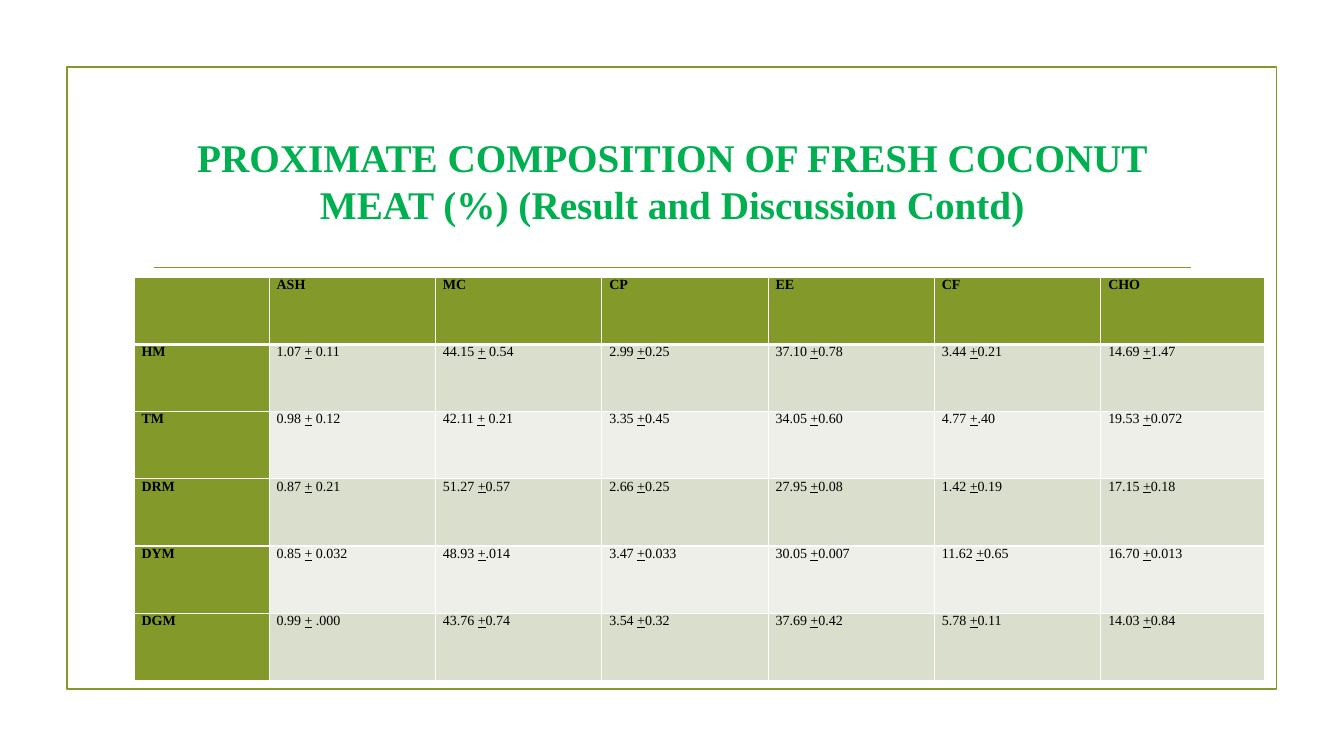
from lxml.etree import SubElement
from pptx import Presentation
from pptx.dml.color import RGBColor
from pptx.enum.shapes import MSO_CONNECTOR, MSO_SHAPE
from pptx.enum.text import MSO_ANCHOR, PP_ALIGN
from pptx.oxml.ns import qn
from pptx.util import Pt

OLIVE = RGBColor(0x83, 0x99, 0x2A)
GREEN = RGBColor(0x00, 0xB0, 0x50)
BAND_DARK = RGBColor(0xD9, 0xDE, 0xCD)
BAND_LIGHT = RGBColor(0xED, 0xEF, 0xE8)
BLACK = RGBColor(0, 0, 0)
WHITE = RGBColor(255, 255, 255)

COMPOSITION = [
    ["", "ASH", "MC", "CP", "EE", "CF", "CHO"],
    ["HM", "1.07 + 0.11", "44.15 + 0.54", "2.99 +0.25", "37.10 +0.78", "3.44 +0.21", "14.69 +1.47"],
    ["TM", "0.98 + 0.12", "42.11 + 0.21", "3.35 +0.45", "34.05 +0.60", "4.77 +.40", "19.53 +0.072"],
    ["DRM", "0.87 + 0.21", "51.27 +0.57", "2.66 +0.25", "27.95 +0.08", "1.42 +0.19", "17.15 +0.18"],
    ["DYM", "0.85 + 0.032", "48.93 +.014", "3.47 +0.033", "30.05 +0.007", "11.62 +0.65", "16.70 +0.013"],
    ["DGM", "0.99 + .000", "43.76 +0.74", "3.54 +0.32", "37.69 +0.42", "5.78 +0.11", "14.03 +0.84"],
]
COLUMN_WIDTHS = [96.5] + [118.8] * 5 + [117.4]
ROW_HEIGHT = 48
CELL_FORMAT = {"margin_left": Pt(5.4), "margin_right": Pt(5.4), "margin_top": 0,
               "margin_bottom": 0, "vertical_anchor": MSO_ANCHOR.TOP}


def add_run(paragraph, text, size, color, bold, underline=False):
    run = paragraph.add_run()
    run.text = text
    font_format = {"name": "Times New Roman", "size": Pt(size), "bold": bold, "underline": underline}
    for attribute, value in font_format.items():
        setattr(run.font, attribute, value)
    run.font.color.rgb = color


def add_border(cell, side, width):
    line = SubElement(cell._tc.get_or_add_tcPr(), qn(f"a:ln{side}"), w=str(Pt(width)))
    SubElement(SubElement(line, qn("a:solidFill")), qn("a:srgbClr"), val=str(WHITE))


presentation = Presentation()
presentation.slide_width, presentation.slide_height = Pt(960), Pt(540)
slide = presentation.slides.add_slide(presentation.slide_layouts[5])

frame = slide.shapes.add_shape(MSO_SHAPE.RECTANGLE, Pt(47.75), Pt(48), Pt(864), Pt(444.25))
frame.shadow.inherit = False
frame.fill.background()

divider = slide.shapes.add_connector(MSO_CONNECTOR.STRAIGHT, Pt(110), Pt(191), Pt(850.5), Pt(191))
SubElement(divider._element.spPr, qn("a:effectLst"))

for outline in (frame.line, divider.line):
    outline.color.rgb = OLIVE
    outline.width = Pt(1.25)

title = slide.shapes.title
title.left, title.top, title.width, title.height = Pt(102), Pt(77), Pt(756), Pt(103)
title.text_frame.word_wrap = True
title.text_frame.vertical_anchor = MSO_ANCHOR.MIDDLE
heading = title.text_frame.paragraphs[0]
heading.alignment = PP_ALIGN.CENTER
add_run(heading, "PROXIMATE COMPOSITION OF FRESH COCONUT MEAT (%) (Result and Discussion Contd)",
        28, GREEN, True)

table = slide.shapes.add_table(
    len(COMPOSITION), len(COLUMN_WIDTHS), Pt(95.75), Pt(198),
    Pt(sum(COLUMN_WIDTHS)), Pt(ROW_HEIGHT * len(COMPOSITION))).table
table.first_col = True
for column, width in zip(table.columns, COLUMN_WIDTHS):
    column.width = Pt(width)

for row_number, values in enumerate(COMPOSITION):
    table.rows[row_number].height = Pt(ROW_HEIGHT)
    band = BAND_DARK if row_number % 2 else BAND_LIGHT
    for column_number, value in enumerate(values):
        cell = table.cell(row_number, column_number)
        is_header = row_number == 0 or column_number == 0
        for attribute, setting in CELL_FORMAT.items():
            setattr(cell, attribute, setting)
        for side in "LRTB":
            below_header = (row_number, side) in ((0, "B"), (1, "T"))
            add_border(cell, side, 3 if below_header else 1)
        cell.fill.solid()
        cell.fill.fore_color.rgb = OLIVE if is_header else band
        mean, plus, deviation = value.partition("+")
        for part in filter(None, (mean, plus, deviation)):
            add_run(cell.text_frame.paragraphs[0], part, 10, BLACK, is_header, part == "+")

presentation.save("out.pptx")
